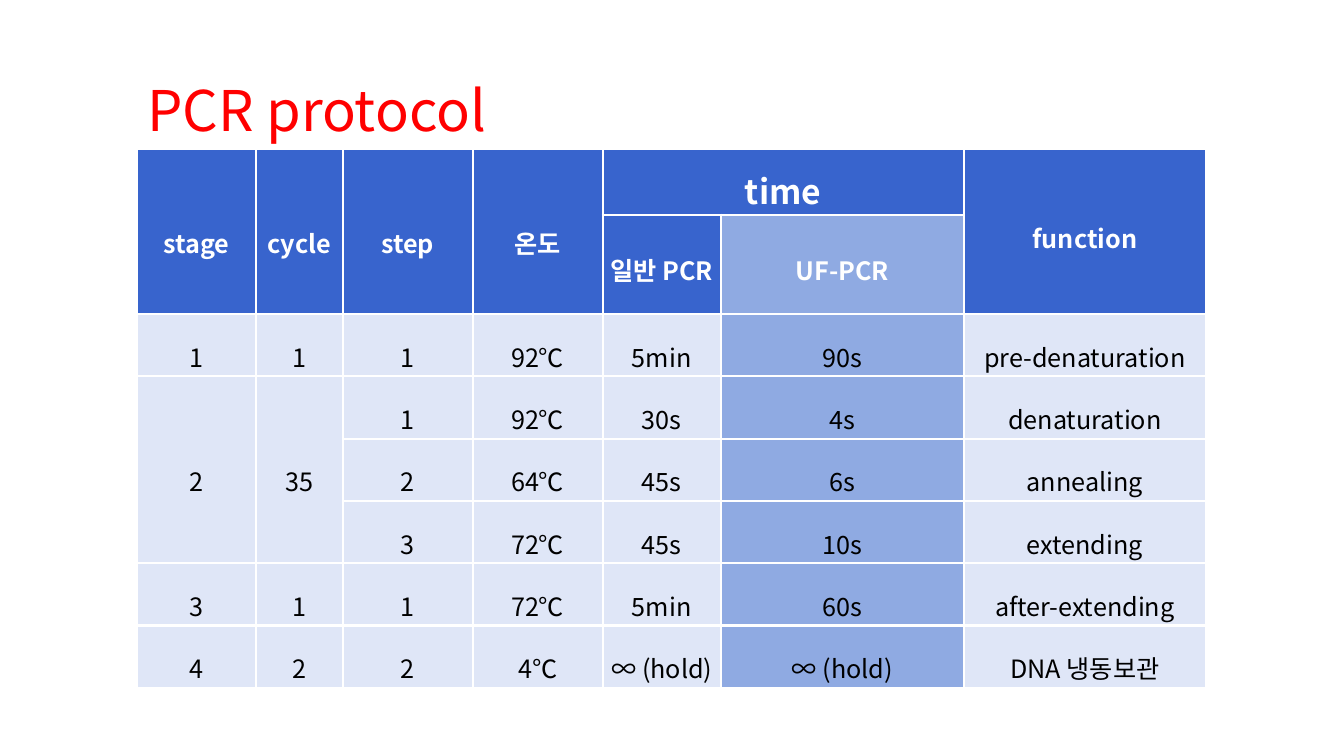
from lxml.etree import SubElement
from pptx import Presentation
from pptx.dml.color import RGBColor
from pptx.enum.text import MSO_ANCHOR, MSO_AUTO_SIZE, PP_ALIGN
from pptx.oxml import parse_xml
from pptx.oxml.ns import nsdecls, qn
from pptx.util import Pt

FONT = "Noto Sans CJK KR"
WHITE, BLACK, RED = "FFFFFF", "000000", "FF0000"
HEADER_BLUE, FAST_BLUE, BODY_BLUE = "3864CD", "8FAAE2", "DFE6F7"
FAST_COLUMN = 5
HEADER_ROWS = 2
COLUMN_WIDTHS = [84.6, 62.3, 92.8, 92.8, 84.6, 173.3, 173.3]
ROW_HEIGHTS = [47, 71] + [44.5] * 6
ROWS = [
    ["stage", "cycle", "step", "온도", "time", "", "function"],
    ["", "", "", "", "일반 PCR", "UF-PCR", ""],
    ["1", "1", "1", "92℃", "5min", "90s", "pre-denaturation"],
    ["2", "35", "1", "92℃", "30s", "4s", "denaturation"],
    ["", "", "2", "64℃", "45s", "6s", "annealing"],
    ["", "", "3", "72℃", "45s", "10s", "extending"],
    ["3", "1", "1", "72℃", "5min", "60s", "after-extending"],
    ["4", "2", "2", "4℃", "∞ (hold)", "∞ (hold)", "DNA 냉동보관"],
]
MERGES = [((0, column), (1, column)) for column in (0, 1, 2, 3, 6)]
MERGES += [((0, 4), (0, 5)), ((3, 0), (5, 0)), ((3, 1), (5, 1))]


def color(value):
    """Turn a hex string into a colour."""
    return RGBColor.from_string(value)


def write(frame, text, size=18, ink=BLACK, bold=False, align=PP_ALIGN.CENTER, spacing=1.6):
    """Put one formatted paragraph into a text frame."""
    para = frame.paragraphs[0]
    para.alignment = align
    para.line_spacing = spacing
    span = para.add_run()
    span.text = text
    span.font.size = Pt(size)
    span.font.bold = bold
    span.font.name = FONT
    span.font.color.rgb = color(ink)
    SubElement(span.font._element, qn("a:ea"), typeface=FONT)


def draw_borders(cell, ink=WHITE, width=1.7):
    """Rule all four sides of a table cell."""
    properties = cell._tc.get_or_add_tcPr()
    for index, side in enumerate(("lnL", "lnR", "lnT", "lnB")):
        line = parse_xml(
            f'<a:{side} {nsdecls("a")} w="{Pt(width)}"><a:solidFill>'
            f'<a:srgbClr val="{ink}"/></a:solidFill></a:{side}>'
        )
        properties.insert(index, line)


def style_cell(cell, fill):
    """Give a cell its fill, margins, anchor and borders."""
    cell.fill.solid()
    cell.fill.fore_color.rgb = color(fill)
    cell.margin_left = cell.margin_right = Pt(5)
    cell.margin_top = cell.margin_bottom = Pt(1.4)
    cell.vertical_anchor = MSO_ANCHOR.MIDDLE
    draw_borders(cell)


def cell_fill(row, column):
    """Choose the fill for a place in the grid."""
    if column == FAST_COLUMN and row > 0:
        return FAST_BLUE
    return HEADER_BLUE if row < HEADER_ROWS else BODY_BLUE


def cell_format(row, column):
    """Choose the text format for a place in the grid."""
    if row >= HEADER_ROWS:
        return {}
    return {
        "ink": WHITE,
        "bold": True,
        "size": 24 if ROWS[row][column] == "time" else 18,
        "spacing": 1.6 if column < 4 else 1.3,
    }


def place_title(page, left, top, width, height):
    """Set the slide title in the given box."""
    title = page.shapes.title
    title.left, title.top, title.width, title.height = map(Pt, (left, top, width, height))
    frame = title.text_frame
    frame.word_wrap = True
    frame.auto_size = MSO_AUTO_SIZE.SHAPE_TO_FIT_TEXT
    frame.vertical_anchor = MSO_ANCHOR.MIDDLE
    write(frame, "PCR protocol", size=40, ink=RED, align=PP_ALIGN.LEFT, spacing=0.9)


def place_protocol(page, left, top, width, height):
    """Draw the protocol table in the given box."""
    box = page.shapes.add_table(len(ROWS), len(COLUMN_WIDTHS), *map(Pt, (left, top, width, height)))
    table = box.table
    table.horz_banding = False
    for column, size in zip(table.columns, COLUMN_WIDTHS):
        column.width = Pt(size * width / sum(COLUMN_WIDTHS))
    for row, size in zip(table.rows, ROW_HEIGHTS):
        row.height = Pt(size * height / sum(ROW_HEIGHTS))
    for first, last in MERGES:
        table.cell(*first).merge(table.cell(*last))
    for row, texts in enumerate(ROWS):
        for column, text in enumerate(texts):
            cell = table.cell(row, column)
            style_cell(cell, cell_fill(row, column))
            if text:
                write(cell.text_frame, text, **cell_format(row, column))


def main():
    """Build the deck and save it."""
    deck = Presentation()
    deck.slide_width, deck.slide_height = Pt(960), Pt(540)
    page = deck.slides.add_slide(deck.slide_layouts[5])
    left, width = 98, sum(COLUMN_WIDTHS)
    place_protocol(page, left, 106.4, width, sum(ROW_HEIGHTS))
    place_title(page, left, 55.5, width, 51)
    deck.save("out.pptx")


if __name__ == "__main__":
    main()
